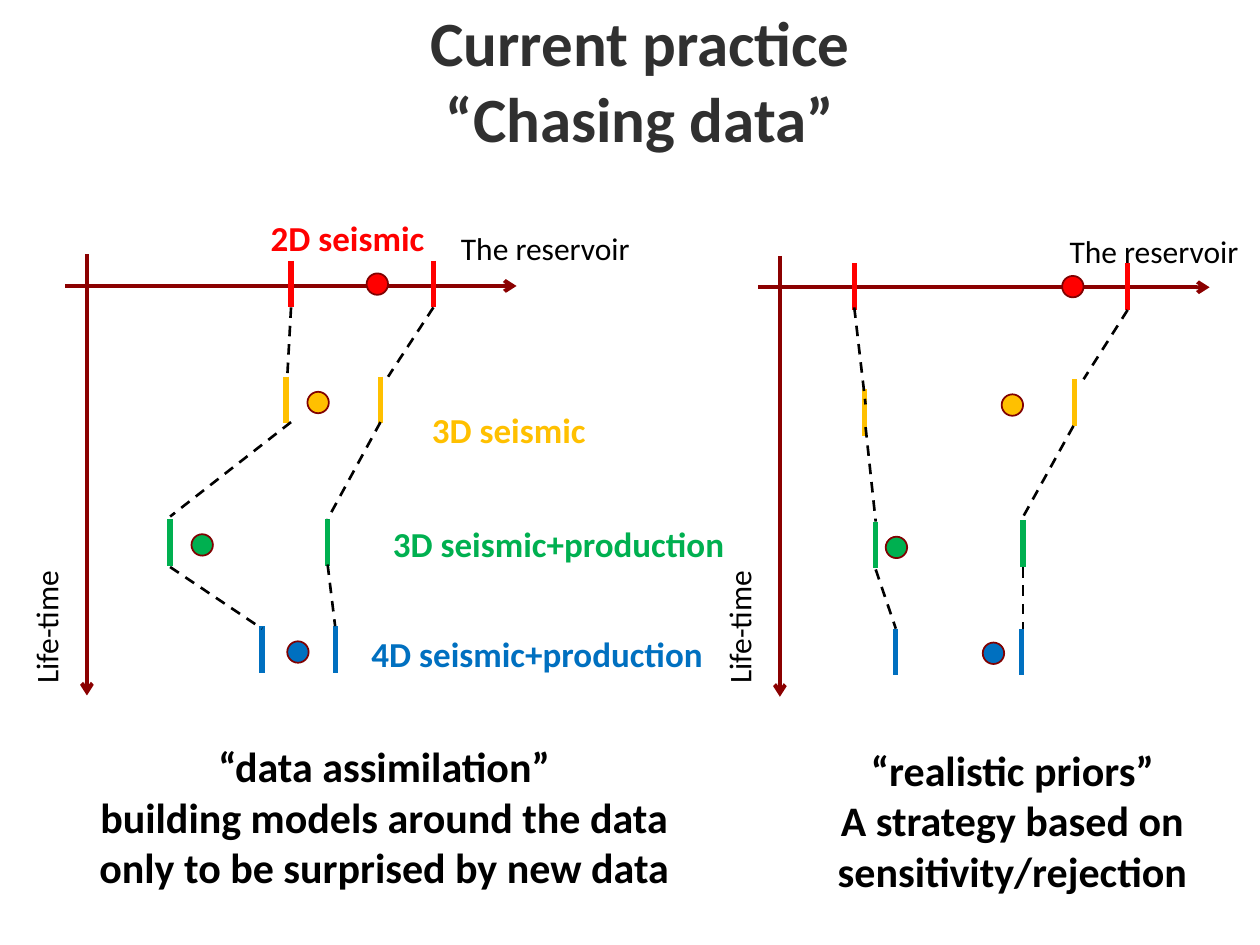
"""Build the slide that contrasts data assimilation with realistic priors."""
import dataclasses
import typing

import lxml.etree
import pptx
import pptx.dml.color
import pptx.enum.dml
import pptx.enum.shapes
import pptx.enum.text
import pptx.oxml.ns
import pptx.slide
import pptx.util

Inches = pptx.util.Inches
Pt = pptx.util.Pt
Point = typing.Tuple[float, float]


@dataclasses.dataclass(frozen=True)
class Theme:
    font: str = "Calibri"
    heading: str = "303030"
    ink: str = "000000"
    axis: str = "8B0000"
    outline: str = "800101"
    red: str = "FF0000"
    amber: str = "FFC000"
    green: str = "00B050"
    blue: str = "0070C0"
    title_size: int = 36
    caption_size: int = 24
    label_size: int = 20
    axis_size: int = 18
    axis_width: float = 2.25
    tick_width: float = 3
    dash_width: float = 1.5
    dot_width: float = 1
    tick: float = 0.37
    dot: float = 0.17


THEME = Theme()


@dataclasses.dataclass(frozen=True)
class Label:
    text: str
    left: float
    top: float
    width: float
    height: float
    size: int
    color: str = THEME.ink
    bold: bool = True
    centred: bool = False
    wrap: bool = False
    rotation: int = 0
    bottom: bool = False


@dataclasses.dataclass(frozen=True)
class Stage:
    color: str
    low: Point
    high: Point
    dot: Point


@dataclasses.dataclass(frozen=True)
class Diagram:
    origin: Point
    reservoir: Point
    life_time_left: float
    stages: typing.Tuple[Stage, ...]
    links: typing.Tuple[typing.Tuple[Point, Point], ...]


DIAGRAMS = (
    Diagram(
        (0.69, 2.27), (3.56, 1.77), -0.19,
        (
            Stage(THEME.red, (2.31, 2.07), (3.44, 2.07), (2.91, 2.17)),
            Stage(THEME.amber, (2.27, 2.99), (3.02, 2.99), (2.44, 3.11)),
            Stage(THEME.green, (1.35, 4.12), (2.6, 4.12), (1.52, 4.24)),
            Stage(THEME.blue, (2.08, 4.97), (2.66, 4.97), (2.28, 5.09)),
        ),
        (
            ((2.31, 2.44), (2.28, 2.99)), ((3.44, 2.44), (3.08, 2.99)),
            ((2.31, 3.35), (1.35, 4.1)), ((3.02, 3.35), (2.6, 4.12)),
            ((1.35, 4.5), (2.08, 4.99)), ((2.6, 4.48), (2.66, 4.97)),
        ),
    ),
    Diagram(
        (6.19, 2.28), (8.39, 1.79), 5.31,
        (
            Stage(THEME.red, (6.78, 2.09), (8.95, 2.09), (8.43, 2.19)),
            Stage(THEME.amber, (6.86, 3.09), (8.53, 3.01), (7.95, 3.13)),
            Stage(THEME.green, (6.95, 4.14), (8.12, 4.13), (7.03, 4.26)),
            Stage(THEME.blue, (7.11, 4.99), (8.11, 4.99), (7.8, 5.1)),
        ),
        (
            ((6.78, 2.44), (6.87, 3.21)), ((8.95, 2.46), (8.6, 3.01)),
            ((6.87, 3.39), (6.95, 4.14)), ((8.52, 3.38), (8.11, 4.12)),
            ((6.95, 4.52), (7.11, 4.99)), ((8.12, 4.5), (8.12, 4.99)),
        ),
    ),
)

LABELS = (
    Label("Current practice\v“Chasing data”", 0.83, 0.08, 8.5, 1.25, THEME.title_size,
          THEME.heading, centred=True, wrap=True, bottom=True),
    Label("2D seismic", 2.05, 1.67, 1.43, 0.44, THEME.label_size, THEME.red),
    Label("3D seismic", 3.33, 3.19, 1.43, 0.44, THEME.label_size, THEME.amber),
    Label("3D seismic+production", 3.02, 4.1, 2.86, 0.44, THEME.label_size, THEME.green),
    Label("4D seismic+production", 2.85, 4.97, 2.86, 0.44, THEME.label_size, THEME.blue),
    Label("“data assimilation”\nbuilding models around the data only to be surprised by new data",
          0.6, 5.83, 4.9, 1.31, THEME.caption_size, centred=True, wrap=True),
    Label("“realistic priors”\nA strategy based on\nsensitivity/rejection",
          6.53, 5.86, 3.01, 1.31, THEME.caption_size, centred=True),
)


def rgb(color: str) -> pptx.dml.color.RGBColor:
    """Turn a hex string into a colour."""
    return pptx.dml.color.RGBColor.from_string(color)


def draw_label(page: pptx.slide.Slide, label: Label) -> None:
    """Draw one text box."""
    box = page.shapes.add_textbox(
        Inches(label.left), Inches(label.top), Inches(label.width), Inches(label.height))
    box.rotation = label.rotation
    frame = box.text_frame
    frame.word_wrap = label.wrap
    if label.bottom:
        frame.vertical_anchor = pptx.enum.text.MSO_ANCHOR.BOTTOM
        frame.margin_bottom = Inches(0.1)
    frame.text = label.text
    for para in frame.paragraphs:
        if label.centred:
            para.alignment = pptx.enum.text.PP_ALIGN.CENTER
        para.font.name = THEME.font
        para.font.size = Pt(label.size)
        para.font.bold = label.bold
        para.font.color.rgb = rgb(label.color)


def draw_line(page: pptx.slide.Slide, start: Point, end: Point, color: str, width: float,
              dashed: bool = False, arrow: bool = False) -> None:
    """Draw one straight line, dashed or with an arrowhead at its end if asked."""
    line = page.shapes.add_connector(
        pptx.enum.shapes.MSO_CONNECTOR.STRAIGHT, *(Inches(value) for value in start + end))
    line.line.color.rgb = rgb(color)
    line.line.width = Pt(width)
    if dashed:
        line.line.dash_style = pptx.enum.dml.MSO_LINE.DASH
    qn = pptx.oxml.ns.qn
    properties = line._element.spPr
    if arrow:
        lxml.etree.SubElement(properties.find(qn("a:ln")), qn("a:tailEnd"), type="arrow")
    lxml.etree.SubElement(properties, qn("a:effectLst"))


def draw_stage(page: pptx.slide.Slide, stage: Stage) -> None:
    """Draw the two bounds of a stage and the dot for its true value."""
    for x, y in (stage.low, stage.high):
        draw_line(page, (x, y), (x, y + THEME.tick), stage.color, THEME.tick_width)
    left, top = stage.dot
    dot = page.shapes.add_shape(
        pptx.enum.shapes.MSO_SHAPE.OVAL,
        Inches(left), Inches(top), Inches(THEME.dot), Inches(THEME.dot))
    dot.shadow.inherit = False
    dot.fill.solid()
    dot.fill.fore_color.rgb = rgb(stage.color)
    dot.line.color.rgb = rgb(THEME.outline)
    dot.line.width = Pt(THEME.dot_width)


def draw_diagram(page: pptx.slide.Slide, diagram: Diagram) -> None:
    """Draw the axes, their names, the stages and the dashed links."""
    x, y = diagram.origin
    for start, end in (((x - 0.17, y), (x + 3.41, y)), ((x, y - 0.25), (x, y + 3.25))):
        draw_line(page, start, end, THEME.axis, THEME.axis_width, arrow=True)
    draw_label(page, Label("The reservoir", *diagram.reservoir, 1.56, 0.4,
                           THEME.axis_size, bold=False))
    draw_label(page, Label("Life-time", diagram.life_time_left, 4.77, 1.11, 0.4,
                           THEME.axis_size, bold=False, rotation=270))
    for stage in diagram.stages:
        draw_stage(page, stage)
    for start, end in diagram.links:
        draw_line(page, start, end, THEME.ink, THEME.dash_width, dashed=True)


def main() -> None:
    """Build and save the deck."""
    deck = pptx.Presentation()
    deck.slide_width, deck.slide_height = Inches(10), Inches(7.5)
    page = deck.slides.add_slide(deck.slide_layouts[6])
    for diagram in DIAGRAMS:
        draw_diagram(page, diagram)
    for label in LABELS:
        draw_label(page, label)
    deck.save("out.pptx")


if __name__ == "__main__":
    main()
